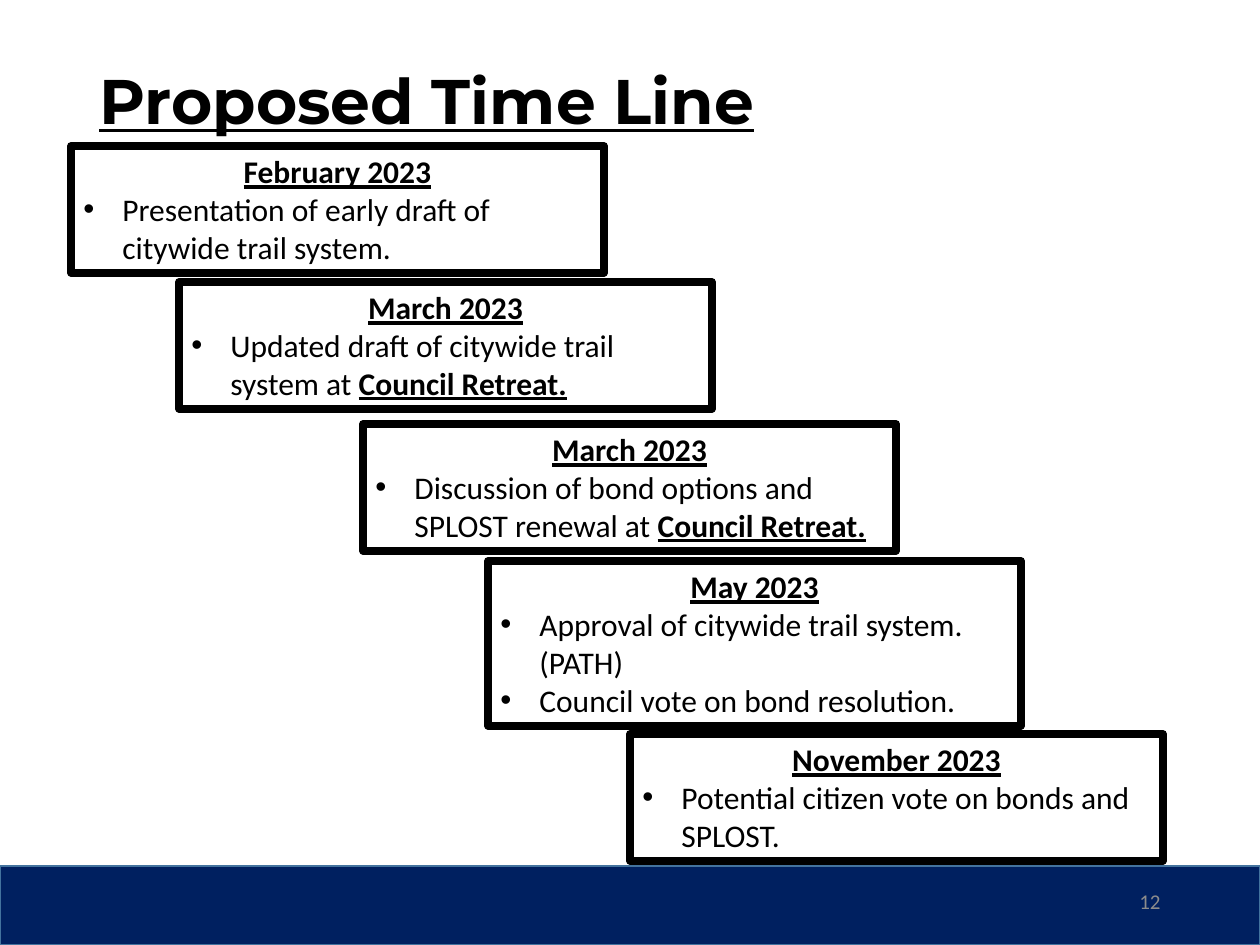
from dataclasses import dataclass

from lxml import etree
from pptx import Presentation
from pptx.dml.color import RGBColor
from pptx.enum.shapes import MSO_SHAPE
from pptx.enum.text import MSO_ANCHOR, MSO_AUTO_SIZE, PP_ALIGN
from pptx.oxml.ns import qn
from pptx.util import Emu, Pt

RECTANGLE = MSO_SHAPE.RECTANGLE
TOP, MIDDLE = MSO_ANCHOR.TOP, MSO_ANCHOR.MIDDLE
LEFT, CENTER, RIGHT = PP_ALIGN.LEFT, PP_ALIGN.CENTER, PP_ALIGN.RIGHT
GROW = MSO_AUTO_SIZE.SHAPE_TO_FIT_TEXT

PX_PER_INCH = 126
SLIDE_W, SLIDE_H = 1260, 945
CARD_W, CARD_BASE_H, LINE_H = 533, 13, 38
BULLET_INDENT = 39


@dataclass(frozen=True)
class Theme:
    ink: RGBColor = RGBColor(0x00, 0x00, 0x00)
    navy: RGBColor = RGBColor(0x00, 0x20, 0x60)
    band_edge: RGBColor = RGBColor(0x43, 0x73, 0x9E)
    grey: RGBColor = RGBColor(0x8C, 0x8C, 0x8C)
    title_font: str = "Montserrat"
    body_font: str = "Calibri"
    title_size: int = 36
    body_size: int = 18
    number_size: int = 12
    card_line: float = 4.25
    band_line: float = 1


THEME = Theme()

# left, top, text lines, heading, bullets as (plain text, emphasised text)
MILESTONES = [
    (71, 146, 3, "February 2023",
     [("Presentation of early draft of citywide trail system.", "")]),
    (179, 282, 3, "March 2023",
     [("Updated draft of citywide trail system at ", "Council Retreat.")]),
    (363, 424, 3, "March 2023",
     [("Discussion of bond options and SPLOST renewal at ", "Council Retreat.")]),
    (488, 561, 4, "May 2023",
     [("Approval of citywide trail system. (PATH)", ""),
      ("Council vote on bond resolution.", "")]),
    (630, 734, 3, "November 2023",
     [("Potential citizen vote on bonds and SPLOST.", "")]),
]


def px(n):
    return Emu(round(n * 914400 / PX_PER_INCH))


def add_run(p, text, size, color, font=THEME.body_font, strong=False):
    """Add a run; strong means bold and underlined."""
    r = p.add_run()
    r.text = text
    r.font.name = font
    r.font.size = Pt(size)
    r.font.color.rgb = color
    r.font.bold = r.font.underline = strong


def add_rectangle(slide, box, line_color, line_width, fill=None):
    s = slide.shapes.add_shape(RECTANGLE, *map(px, box))
    s.shadow.inherit = False
    if fill is None:
        s.fill.background()
    else:
        s.fill.solid()
        s.fill.fore_color.rgb = fill
    s.line.color.rgb = line_color
    s.line.width = Pt(line_width)
    return s


def add_label(slide, box, align):
    """Add a vertically centred text box and return its paragraph."""
    tf = slide.shapes.add_textbox(*map(px, box)).text_frame
    tf.word_wrap = True
    tf.vertical_anchor = MIDDLE
    p = tf.paragraphs[0]
    p.alignment = align
    return p


def set_bullet(p):
    p_pr = p._p.get_or_add_pPr()
    p_pr.set("marL", str(px(BULLET_INDENT)))
    p_pr.set("indent", str(-px(BULLET_INDENT)))
    etree.SubElement(p_pr, qn("a:buFont")).set("typeface", "Arial")
    etree.SubElement(p_pr, qn("a:buChar")).set("char", "•")


def add_milestone(slide, left, top, lines, heading, bullets):
    box = (left, top, CARD_W, CARD_BASE_H + lines * LINE_H)
    tf = add_rectangle(slide, box, THEME.ink, THEME.card_line).text_frame
    tf.word_wrap = True
    tf.auto_size = GROW
    tf.vertical_anchor = TOP
    p = tf.paragraphs[0]
    p.alignment = CENTER
    add_run(p, heading, THEME.body_size, THEME.ink, strong=True)
    for plain, emphasis in bullets:
        p = tf.add_paragraph()
        p.alignment = LEFT
        set_bullet(p)
        add_run(p, plain, THEME.body_size, THEME.ink)
        if emphasis:
            add_run(p, emphasis, THEME.body_size, THEME.ink, strong=True)


def main():
    prs = Presentation()
    prs.slide_width, prs.slide_height = px(SLIDE_W), px(SLIDE_H)
    slide = prs.slides.add_slide(prs.slide_layouts[6])

    add_rectangle(slide, (0, 866, SLIDE_W, 79), THEME.band_edge,
                  THEME.band_line, THEME.navy)
    title = add_label(slide, (87, 50, 1086, 108), LEFT)
    title.line_spacing = 0.9
    add_run(title, "Proposed Time Line", THEME.title_size, THEME.ink,
            THEME.title_font, strong=True)
    number = add_label(slide, (890, 876, 283, 50), RIGHT)
    add_run(number, "12", THEME.number_size, THEME.grey)
    for milestone in MILESTONES:
        add_milestone(slide, *milestone)

    prs.save("out.pptx")


if __name__ == "__main__":
    main()
